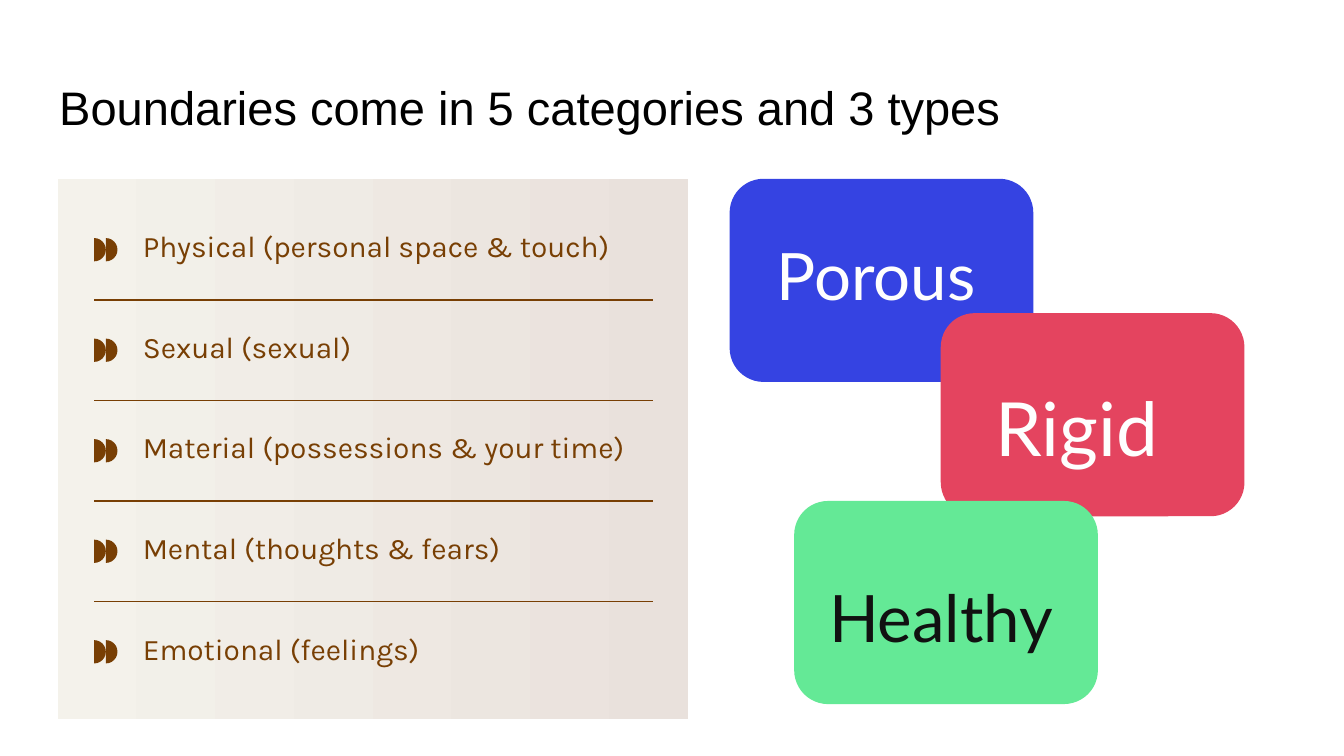
from dataclasses import dataclass

from lxml.etree import SubElement
from pptx import Presentation
from pptx.dml.color import RGBColor
from pptx.enum.shapes import MSO_CONNECTOR, MSO_SHAPE
from pptx.enum.text import MSO_ANCHOR
from pptx.oxml.ns import qn
from pptx.shapes.autoshape import Shape
from pptx.slide import Slide
from pptx.util import Cm, Pt

BLACK = RGBColor(0x00, 0x00, 0x00)
BROWN = RGBColor(0x78, 0x3F, 0x04)
SAND = RGBColor(0xF4, 0xF2, 0xEB)
TAUPE = RGBColor(0xE9, 0xE1, 0xDC)
BLUE = RGBColor(0x35, 0x43, 0xE2)
RED = RGBColor(0xE4, 0x44, 0x5F)
GREEN = RGBColor(0x64, 0xE9, 0x96)
OFF_WHITE = RGBColor(0xFE, 0xFE, 0xFE)
INK = RGBColor(0x11, 0x11, 0x11)

ROW_PITCH = 1.9
CATEGORIES = [
    "Physical (personal space & touch)",
    "Sexual (sexual)",
    "Material (possessions & your time)",
    "Mental (thoughts & fears)",
    "Emotional (feelings)",
]


@dataclass(frozen=True)
class Box:
    left: float
    top: float
    width: float
    height: float

    def lengths(self) -> tuple[Cm, Cm, Cm, Cm]:
        return Cm(self.left), Cm(self.top), Cm(self.width), Cm(self.height)


@dataclass(frozen=True)
class Style:
    font: str
    size: float
    color: RGBColor
    anchor: MSO_ANCHOR
    spacing: float = 1.0


@dataclass(frozen=True)
class BoundaryType:
    name: str
    card_left: float
    card_top: float
    card_color: RGBColor
    label_left: float
    label_top: float
    size: float
    text_color: RGBColor


TITLE_STYLE = Style("Arial", 25.2, BLACK, MSO_ANCHOR.TOP)
CATEGORY_STYLE = Style("Karla", 16, BROWN, MSO_ANCHOR.MIDDLE, 0.8)
TYPES = [
    BoundaryType("Porous", 13.79, 3.38, BLUE, 14.43, 4.06, 35, OFF_WHITE),
    BoundaryType("Rigid", 17.78, 5.92, RED, 18.57, 7.06, 40, OFF_WHITE),
    BoundaryType("Healthy", 15.01, 9.47, GREEN, 15.42, 10.54, 35, INK),
]


def add_text(slide: Slide, text: str, box: Box, style: Style) -> None:
    frame = slide.shapes.add_textbox(*box.lengths()).text_frame
    frame.word_wrap = True
    frame.vertical_anchor = style.anchor
    frame.margin_left = frame.margin_right = Cm(0.25)
    frame.margin_top = frame.margin_bottom = Cm(0.25)
    frame.text = text
    paragraph = frame.paragraphs[0]
    paragraph.line_spacing = style.spacing
    font = paragraph.runs[0].font
    font.name = style.font
    font.size = Pt(style.size)
    font.color.rgb = style.color


def add_solid(slide: Slide, kind: MSO_SHAPE, box: Box, color: RGBColor) -> Shape:
    solid = slide.shapes.add_shape(kind, *box.lengths())
    solid.shadow.inherit = False
    solid.fill.solid()
    solid.fill.fore_color.rgb = color
    solid.line.fill.background()
    return solid


def add_panel(slide: Slide) -> None:
    panel = add_solid(slide, MSO_SHAPE.RECTANGLE, Box(1.09, 3.38, 11.91, 10.21), SAND)
    panel.fill.gradient()
    panel.fill.gradient_angle = 0
    for stop, color, position in zip(panel.fill.gradient_stops, (SAND, TAUPE), (0, 1)):
        stop.color.rgb = color
        stop.position = position


def add_divider(slide: Slide, top: float) -> None:
    divider = slide.shapes.add_connector(
        MSO_CONNECTOR.STRAIGHT, Cm(1.78), Cm(top), Cm(12.34), Cm(top)
    )
    divider.line.color.rgb = BROWN
    divider.line.width = Pt(0.75)
    SubElement(divider.line._get_or_add_ln().getparent(), qn("a:effectLst"))


def add_category(slide: Slide, row: int, text: str) -> None:
    offset = row * ROW_PITCH
    for left in (1.56, 1.78):
        half_disc = add_solid(slide, MSO_SHAPE.PIE, Box(left, 4.5 + offset, 0.44, 0.44), BROWN)
        half_disc.adjustments[0] = 54
        half_disc.adjustments[1] = 162
        half_disc.rotation = 180
    add_text(slide, text, Box(2.45, 4.18 + offset, 9.88, 1.07), CATEGORY_STYLE)
    if row < len(CATEGORIES) - 1:
        add_divider(slide, 5.67 + offset)


def main() -> None:
    deck = Presentation()
    deck.slide_width = Cm(25.4)
    deck.slide_height = Cm(14.29)
    slide = deck.slides.add_slide(deck.slide_layouts[6])

    add_text(
        slide,
        "Boundaries come in 5 categories and 3 types",
        Box(0.87, 1.24, 23.67, 1.6),
        TITLE_STYLE,
    )
    add_panel(slide)
    for row, category in enumerate(CATEGORIES):
        add_category(slide, row, category)
    for kind in TYPES:
        card = Box(kind.card_left, kind.card_top, 5.74, 3.84)
        add_solid(slide, MSO_SHAPE.ROUNDED_RECTANGLE, card, kind.card_color)
    for kind in TYPES:
        label = Box(kind.label_left, kind.label_top, 4.95, 2.11)
        style = Style("Lato", kind.size, kind.text_color, MSO_ANCHOR.BOTTOM)
        add_text(slide, kind.name, label, style)

    deck.save("out.pptx")


if __name__ == "__main__":
    main()
